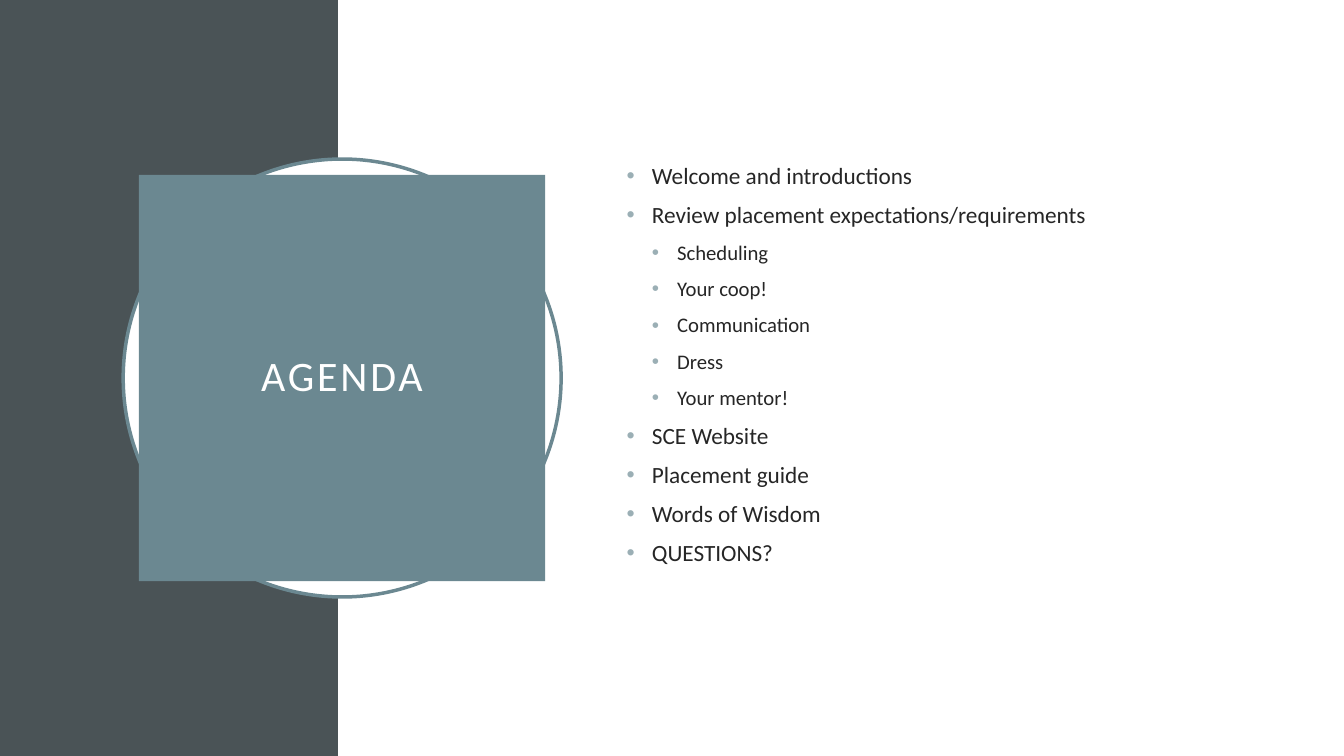
import pptx
import pptx.util
import pptx.dml.color
import pptx.enum.shapes
import pptx.enum.text
import lxml.etree
import pptx.oxml.ns

Pt = pptx.util.Pt
SHAPES = pptx.enum.shapes.MSO_SHAPE
ALIGN = pptx.enum.text.PP_ALIGN
ANCHOR = pptx.enum.text.MSO_ANCHOR

COLORS = {
    "white": "FFFFFF",
    "slate": "4A5356",
    "teal": "6B8891",
    "bullet": "9BAFB5",
    "text": "262626",
}
LEVEL_SIZES = (16.6, 14.8)
INDENT = 18

AGENDA = [
    (0, "Welcome and introductions"),
    (0, "Review placement expectations/requirements"),
    (1, "Scheduling"),
    (1, "Your coop!"),
    (1, "Communication"),
    (1, "Dress"),
    (1, "Your mentor!"),
    (0, "SCE Website"),
    (0, "Placement guide"),
    (0, "Words of Wisdom"),
    (0, "QUESTIONS?"),
]


class SlideBuilder:
    font = "Calibri"
    line_spacing = 0.9

    def __init__(self, slide):
        self.slide = slide

    def color(self, name):
        return pptx.dml.color.RGBColor.from_string(COLORS[name])

    def shape(self, kind, left, top, width, height, fill, line=None):
        shape = self.slide.shapes.add_shape(
            kind, Pt(left), Pt(top), Pt(width), Pt(height))
        shape.shadow.inherit = False
        shape.fill.solid()
        shape.fill.fore_color.rgb = self.color(fill)
        if line:
            shape.line.color.rgb = self.color(line)
            shape.line.width = Pt(2.5)
        else:
            shape.line.fill.background()
        return shape

    def run(self, paragraph, text, size, color):
        paragraph.line_spacing = self.line_spacing
        run = paragraph.add_run()
        run.text = text
        run.font.name = self.font
        run.font.size = Pt(size)
        run.font.color.rgb = self.color(color)
        return run

    def title(self, shape, text):
        frame = shape.text_frame
        frame.word_wrap = True
        frame.vertical_anchor = ANCHOR.MIDDLE
        paragraph = frame.paragraphs[0]
        paragraph.alignment = ALIGN.CENTER
        run = self.run(paragraph, text, 30, "white")
        run.font._element.set("spc", "200")

    def bullet(self, paragraph, level):
        paragraph.level = level
        properties = paragraph._p.get_or_add_pPr()
        properties.set("marL", str(Pt(INDENT * (level + 1))))
        properties.set("indent", str(Pt(-INDENT)))
        qn = pptx.oxml.ns.qn
        color = lxml.etree.SubElement(properties, qn("a:buClr"))
        lxml.etree.SubElement(color, qn("a:srgbClr"), val=COLORS["bullet"])
        lxml.etree.SubElement(properties, qn("a:buFont"), typeface="Arial")
        lxml.etree.SubElement(properties, qn("a:buChar"), char="•")

    def bullet_list(self, left, top, width, height, items):
        box = self.slide.shapes.add_textbox(
            Pt(left), Pt(top), Pt(width), Pt(height))
        frame = box.text_frame
        frame.word_wrap = True
        frame.vertical_anchor = ANCHOR.TOP
        frame.margin_top = Pt(7)
        for index, (level, text) in enumerate(items):
            paragraph = frame.add_paragraph() if index else frame.paragraphs[0]
            self.bullet(paragraph, level)
            paragraph.space_before = Pt(10)
            self.run(paragraph, text, LEVEL_SIZES[level], "text")


def main():
    presentation = pptx.Presentation()
    presentation.slide_width = Pt(960)
    presentation.slide_height = Pt(540)
    slide = presentation.slides.add_slide(presentation.slide_layouts[6])
    builder = SlideBuilder(slide)

    # Background panels
    panel_width = 241.6
    builder.shape(SHAPES.RECTANGLE, 0, 0, panel_width, 540, "slate")
    builder.shape(SHAPES.RECTANGLE, panel_width, 0, 960 - panel_width, 540, "white")

    # Title square over a ring
    builder.shape(SHAPES.OVAL, 88, 113.6, 312.8, 312.8, "white", "teal")
    square = builder.shape(SHAPES.RECTANGLE, 99.2, 124.9, 290.2, 290.2, "teal")
    builder.title(square, "AGENDA")

    # Agenda items
    builder.bullet_list(440.6, 110.2, 419, 319, AGENDA)

    presentation.save("out.pptx")


if __name__ == "__main__":
    main()
